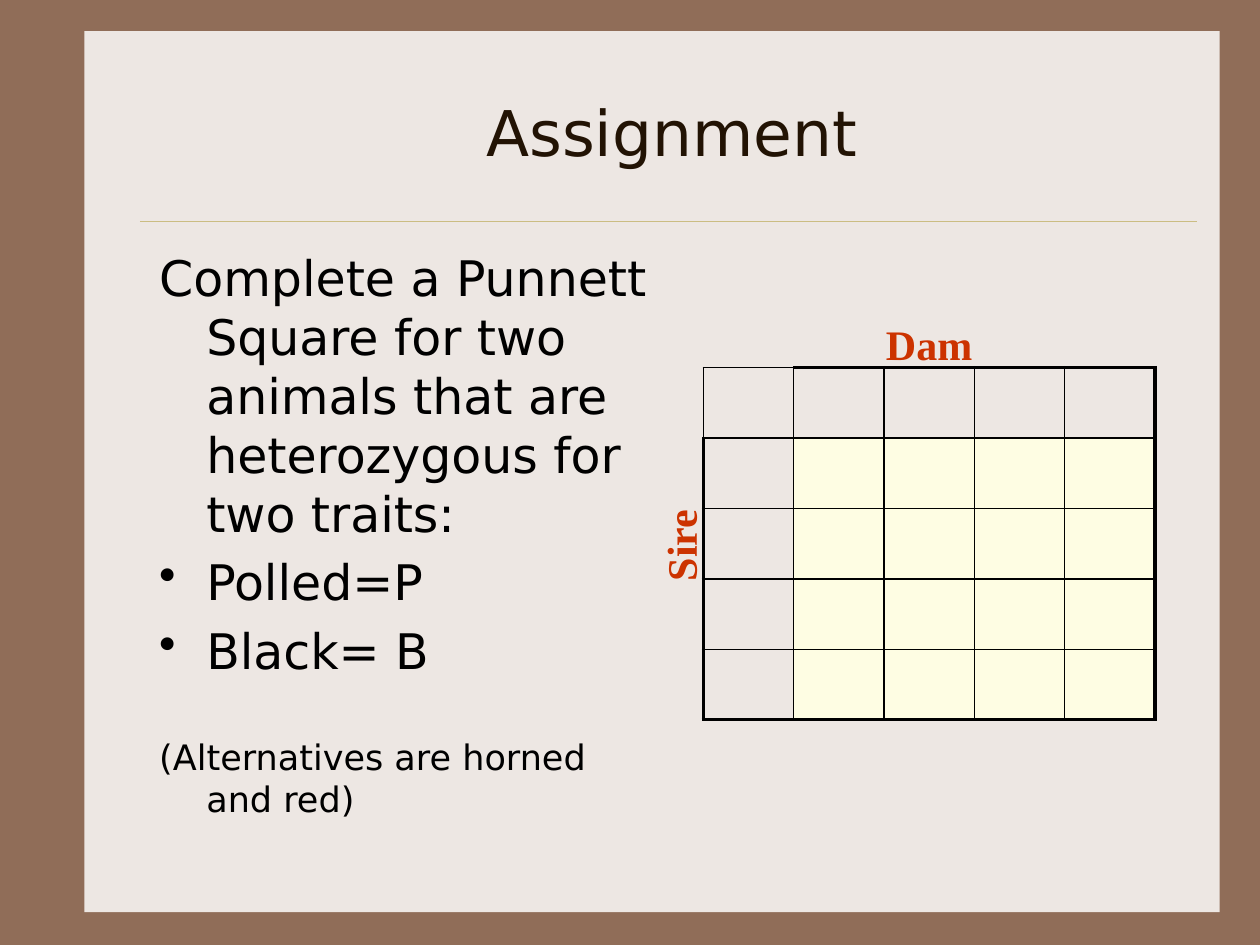
import pptx
import pptx.util
import pptx.dml.color
import pptx.enum.shapes
import pptx.enum.text
import pptx.oxml
import pptx.oxml.ns

Cm, Pt = pptx.util.Cm, pptx.util.Pt
COLORS = {"frame": "906D58", "panel": "EDE7E3", "rule": "CBBD83", "title": "221304",
          "text": "000000", "label": "CC3300", "cell": "FEFDE3", "border": "000000"}
SANS, SERIF = "DejaVu Sans", "Times New Roman"
GRID = 5  # a header row and column plus four gametes each way


def rgb(name):
    return pptx.dml.color.RGBColor.from_string(COLORS[name])


def add_run(p, text, size, font, color, bold=False):
    r = p.add_run()
    r.text = text
    r.font.size, r.font.name, r.font.bold = Pt(size), font, bold
    r.font.color.rgb = rgb(color)


def add_panel(s):
    s.background.fill.solid()
    s.background.fill.fore_color.rgb = rgb("frame")
    sp = s.shapes.add_shape(pptx.enum.shapes.MSO_SHAPE.RECTANGLE,
                            Cm(1.7), Cm(0.63), Cm(22.89), Cm(17.76))
    sp.shadow.inherit = False
    sp.fill.solid()
    sp.fill.fore_color.rgb = rgb("panel")
    sp.line.fill.background()
    s.shapes._spTree.insert(2, sp._element)  # behind the title


def add_rule(s):
    line = s.shapes.add_connector(pptx.enum.shapes.MSO_CONNECTOR.STRAIGHT,
                                  Cm(2.82), Cm(4.45), Cm(24.13), Cm(4.45))
    line.line.color.rgb = rgb("rule")
    line.line.width = Pt(0.25)
    line._element.spPr.append(pptx.oxml.parse_xml(
        f'<a:effectLst {pptx.oxml.ns.nsdecls("a")}/>'))


def set_title(s, text):
    sp = s.shapes.title
    sp.left, sp.top, sp.width, sp.height = Cm(2.96), Cm(1.06), Cm(21.17), Cm(3.18)
    tf = sp.text_frame
    tf.vertical_anchor = pptx.enum.text.MSO_ANCHOR.MIDDLE
    p = tf.paragraphs[0]
    p.alignment = pptx.enum.text.PP_ALIGN.CENTER
    add_run(p, text, 36, SANS, "title")


def add_body(s, items):
    """Each item is (text, size, space before, bulleted)."""
    tf = s.shapes.add_textbox(Cm(2.96), Cm(4.87), Cm(10.37), Cm(12.49)).text_frame
    tf.word_wrap = True
    for i, (text, size, before, bulleted) in enumerate(items):
        p = tf.add_paragraph() if i else tf.paragraphs[0]
        pPr = p._p.get_or_add_pPr()
        pPr.set("marL", str(Cm(0.95)))
        pPr.set("indent", str(-Cm(0.95)))
        bullet = 'buChar char="•"' if bulleted else "buNone"
        pPr.append(pptx.oxml.parse_xml(f'<a:{bullet} {pptx.oxml.ns.nsdecls("a")}/>'))
        p.space_before = Pt(before)
        add_run(p, text, size, SANS, "text")


def set_border(cell, side, width):
    cell._tc.get_or_add_tcPr().append(pptx.oxml.parse_xml(
        f'<a:ln{side} {pptx.oxml.ns.nsdecls("a")} w="{Pt(width)}"><a:solidFill>'
        f'<a:srgbClr val="{COLORS["border"]}"/></a:solidFill></a:ln{side}>'))


def add_punnett_square(s):
    table = s.shapes.add_table(GRID, GRID, Cm(14.18), Cm(7.41), Cm(9.1), Cm(7.1)).table
    table.first_row = table.horz_banding = False
    for row in table.rows:
        row.height = Cm(1.42)
    for col in table.columns:
        col.width = Cm(1.82)
    last = GRID - 1
    for r in range(GRID):
        for c in range(GRID):
            cell = table.cell(r, c)
            # Heavy outer edge everywhere except around the empty corner
            heavy = {"L": c == 0 and r > 0, "R": c == last,
                     "T": r == 0 and c > 0, "B": r == last}
            for side, is_heavy in heavy.items():
                set_border(cell, side, 2.25 if is_heavy else 1)
            if r and c:
                cell.fill.solid()
                cell.fill.fore_color.rgb = rgb("cell")
            else:
                cell.fill.background()


def add_label(s, text, left, top, rotation=0):
    sp = s.shapes.add_textbox(Cm(left), Cm(top), Cm(8.26), Cm(1.27))
    sp.rotation = rotation
    sp.text_frame.word_wrap = True
    p = sp.text_frame.paragraphs[0]
    p.alignment = pptx.enum.text.PP_ALIGN.CENTER
    add_run(p, text, 24, SERIF, "label", bold=True)


def main():
    prs = pptx.Presentation()
    prs.slide_width, prs.slide_height = Cm(25.4), Cm(19.05)
    s = prs.slides.add_slide(prs.slide_layouts[5])

    # Backdrop and heading
    add_panel(s)
    add_rule(s)
    set_title(s, "Assignment")

    # Task
    add_body(s, [
        ("Complete a Punnett Square for two animals that are heterozygous for two traits:",
         28, 0, False),
        ("Polled=P", 28, 5.6, True),
        ("Black= B", 28, 5.6, True),
        ("(Alternatives are horned and red)", 20, 32, False),
    ])

    # Punnett square with its parents
    add_punnett_square(s)
    add_label(s, "Dam", 14.6, 6.3)
    add_label(s, "Sire", 9.58, 10.36, rotation=270)

    prs.save("out.pptx")


if __name__ == "__main__":
    main()
